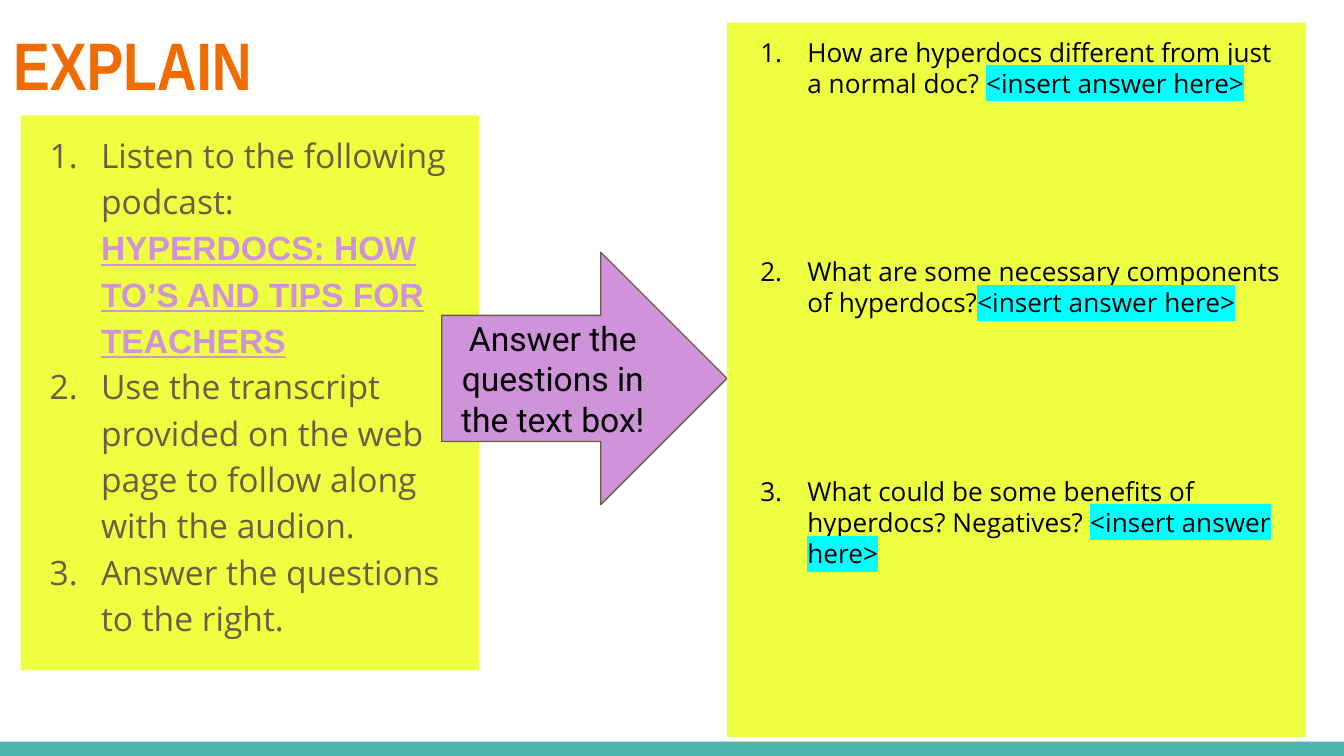
from lxml import etree
from pptx import Presentation
from pptx.dml.color import RGBColor
from pptx.enum.shapes import MSO_SHAPE as SHAPE
from pptx.enum.text import MSO_ANCHOR as ANCHOR, PP_ALIGN as ALIGN
from pptx.oxml.ns import qn
from pptx.util import Cm, Pt

ORANGE = RGBColor(0xEF, 0x6C, 0x00)
TEAL = RGBColor(0x4D, 0xB6, 0xAC)
YELLOW = RGBColor(0xEE, 0xFF, 0x41)
PURPLE = RGBColor(0xCE, 0x93, 0xD8)
BROWN = RGBColor(0x69, 0x5D, 0x46)
BLACK = RGBColor(0, 0, 0)
CYAN = RGBColor(0, 0xFF, 0xFF)

INSET = Cm(0.25)


def add_box(kind, left, top, width, height, fill, anchor=ANCHOR.TOP):
    """Add a shape without line or shadow, ready for wrapped text."""
    sp = s.shapes.add_shape(kind, Cm(left), Cm(top), Cm(width), Cm(height))
    sp.shadow.inherit = False
    sp.fill.solid()
    sp.fill.fore_color.rgb = fill
    sp.line.fill.background()
    tf = sp.text_frame
    tf.word_wrap = True
    tf.vertical_anchor = anchor
    tf.margin_left = tf.margin_right = tf.margin_top = tf.margin_bottom = INSET
    return sp


def add_run(p, text, size, font, color):
    r = p.add_run()
    r.text = text
    r.font.size = Pt(size)
    r.font.name = font
    r.font.color.rgb = color
    return r


prs = Presentation()
prs.slide_width, prs.slide_height = Cm(25.4), Cm(14.29)
s = prs.slides.add_slide(prs.slide_layouts[6])

add_box(SHAPE.RECTANGLE, 0, 14.02, 25.4, 0.27, TEAL)

# Title
tf = s.shapes.add_textbox(Cm(0), Cm(0.2), Cm(23.67), Cm(1.96)).text_frame
tf.word_wrap = True
tf.margin_left = tf.margin_right = tf.margin_top = tf.margin_bottom = INSET
add_run(tf.paragraphs[0], "EXPLAIN", 36, "Arial Narrow", ORANGE).font.bold = True

# Panels, with the arrow leading from the steps to the questions
steps = add_box(SHAPE.RECTANGLE, 0.39, 2.18, 8.66, 10.49, YELLOW)
arrow = add_box(SHAPE.RIGHT_ARROW, 8.35, 4.77, 5.39, 4.77, PURPLE, ANCHOR.MIDDLE)
questions = add_box(SHAPE.RECTANGLE, 13.74, 0.43, 10.94, 13.5, YELLOW)

arrow.line.color.rgb = BROWN
arrow.line.width = Pt(0.75)
p = arrow.text_frame.paragraphs[0]
p.alignment = ALIGN.CENTER
add_run(p, "Answer the questions in the text box!", 18, "Roboto", BLACK)

# Numbered lists: each item is a plain text and an accented ending
PODCAST = "HYPERDOCS: HOW TO’S AND TIPS FOR TEACHERS"
ANSWER = "<insert answer here>"
step_items = [
    ("Listen to the following podcast: ", PODCAST),
    ("Use the transcript provided on the web page to follow along with the audion.", ""),
    ("Answer the questions to the right.", ""),
]
question_items = [
    ("How are hyperdocs different from just a normal doc? ", ANSWER),
    ("What are some necessary components of hyperdocs?", ANSWER),
    ("What could be some benefits of hyperdocs? Negatives? ", ANSWER),
]
lists = [
    (steps, step_items, 18, BROWN, 0.97, 1.15, 0),
    (questions, question_items, 14, BLACK, 0.89, 1.0, 84),
]
for sp, items, size, color, hanging, spacing, gap in lists:
    tf = sp.text_frame
    for i, (text, accent) in enumerate(items):
        p = tf.add_paragraph() if i else tf.paragraphs[0]
        p.alignment = ALIGN.LEFT
        p.line_spacing = spacing
        p.space_before = Pt(gap if i else 0)
        pPr = p._p.get_or_add_pPr()
        pPr.set("marL", str(Cm(1.27)))
        pPr.set("indent", str(-Cm(hanging)))
        bullet_color = etree.SubElement(pPr, qn("a:buClr"))
        etree.SubElement(bullet_color, qn("a:srgbClr"), val=str(color))
        etree.SubElement(pPr, qn("a:buFont"), typeface="Open Sans")
        etree.SubElement(pPr, qn("a:buAutoNum"), type="arabicPeriod")
        add_run(p, text, size, "Open Sans", color)
        if accent == PODCAST:
            r = add_run(p, accent, size, "Arial", PURPLE)
            r.font.bold = r.font.underline = True
        elif accent:
            r = add_run(p, accent, size, "Open Sans", color)
            highlight = etree.Element(qn("a:highlight"))
            etree.SubElement(highlight, qn("a:srgbClr"), val=str(CYAN))
            r._r.rPr.find(qn("a:solidFill")).addnext(highlight)

prs.save("out.pptx")
